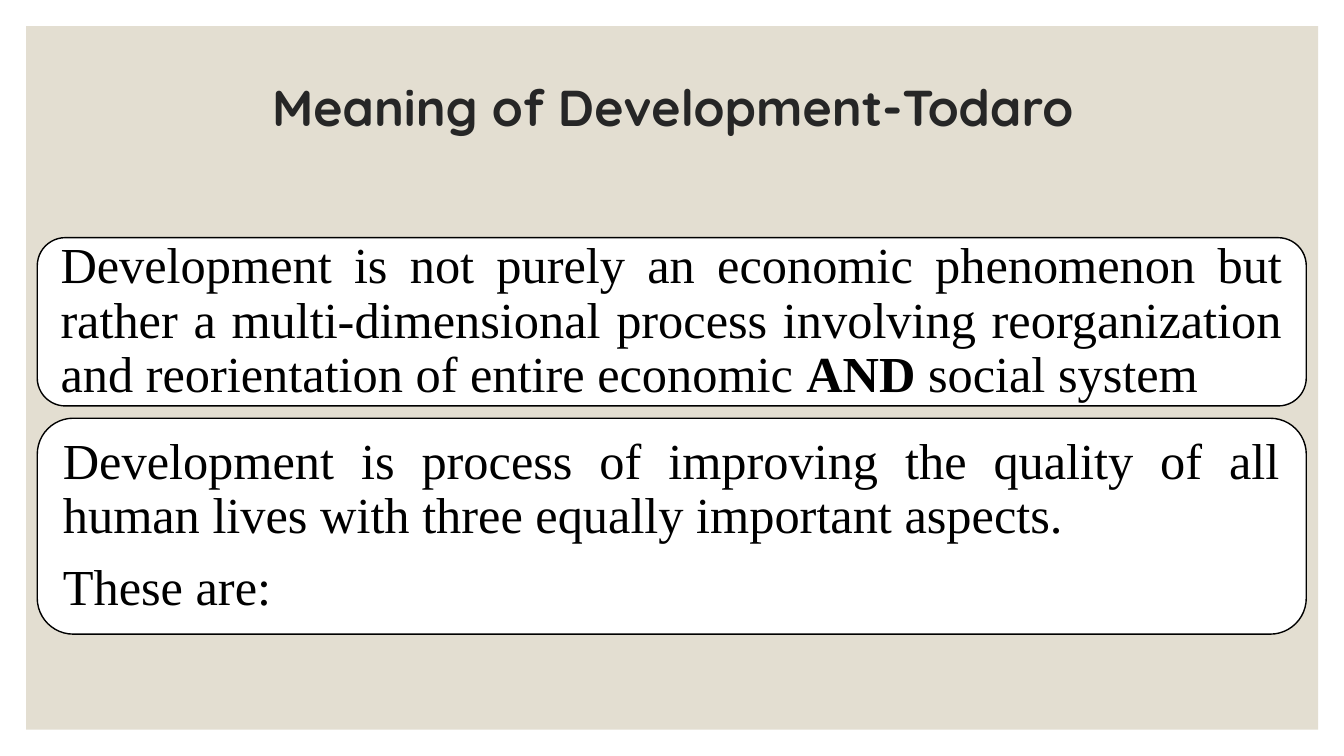
from dataclasses import dataclass

from pptx import Presentation
from pptx import util as u
from pptx.dml.color import RGBColor
from pptx.enum import shapes, text

BODY_FORMAT = {"name": "Times New Roman", "size": u.Pt(36), "bold": False}
TITLE_FORMAT = {"name": "Quicksand", "size": u.Pt(36), "bold": True}
INSET = 0.38


@dataclass
class Span:
    wording: str
    bold: bool = False


@dataclass
class Card:
    top: float
    height: float
    paragraphs: list[list[Span]]


CARDS = [
    Card(5.99, 4.24, [[
        Span("Development is not purely an economic phenomenon but rather a "
             "multi-dimensional process involving reorganization and "
             "reorientation of entire economic "),
        Span("AND", bold=True),
        Span(" social system"),
    ]]),
    Card(10.54, 5.44, [
        [Span("Development is process of improving the quality of all human "
              "lives with three equally important aspects.")],
        [Span("These are:")],
    ]),
]


def colour(value: str) -> RGBColor:
    return RGBColor.from_string(value)


def apply_format(target, values: dict) -> None:
    for name, value in values.items():
        setattr(target, name, value)


def add_box(page, kind, left: float, top: float, width: float, height: float, fill: str):
    box = page.shapes.add_shape(kind, u.Cm(left), u.Cm(top), u.Cm(width), u.Cm(height))
    box.shadow.inherit = False
    box.fill.solid()
    box.fill.fore_color.rgb = colour(fill)
    return box


def add_backdrop(page) -> None:
    backdrop = add_box(page, shapes.MSO_SHAPE.RECTANGLE, 0.66, 0.66, 32.56, 17.73, "E3DED1")
    backdrop.line.fill.background()
    page.shapes.element.insert(2, backdrop.element)


def write_title(page, wording: str) -> None:
    title = page.shapes.title
    apply_format(title, {"left": u.Cm(2.97), "top": u.Cm(1.78),
                         "width": u.Cm(27.97), "height": u.Cm(1.98)})
    frame = title.text_frame
    apply_format(frame, {"text": wording, "word_wrap": True,
                         "auto_size": text.MSO_AUTO_SIZE.NONE,
                         "vertical_anchor": text.MSO_ANCHOR.MIDDLE})
    para = frame.paragraphs[0]
    apply_format(para, {"alignment": text.PP_ALIGN.CENTER, "line_spacing": 0.9})
    span = para.runs[0]
    apply_format(span.font, TITLE_FORMAT)
    span.font.color.rgb = colour("262626")


def add_card(page, card: Card) -> None:
    box = add_box(page, shapes.MSO_SHAPE.ROUNDED_RECTANGLE,
                  0.94, card.top, 31.98, card.height, "FFFFFF")
    box.line.color.rgb = colour("000000")
    box.line.width = u.Pt(1)
    frame = box.text_frame
    apply_format(frame, {"word_wrap": True, "vertical_anchor": text.MSO_ANCHOR.MIDDLE})
    apply_format(frame, {f"margin_{side}": u.Cm(INSET)
                         for side in ("left", "top", "right", "bottom")})
    for index, spans in enumerate(card.paragraphs):
        para = frame.add_paragraph() if index else frame.paragraphs[0]
        apply_format(para, {"alignment": text.PP_ALIGN.JUSTIFY, "line_spacing": 0.9,
                            "space_after": u.Pt(12.6)})
        for part in spans:
            span = para.add_run()
            span.text = part.wording
            apply_format(span.font, BODY_FORMAT | {"bold": part.bold})
            span.font.color.rgb = colour("000000")


def main() -> None:
    deck = Presentation()
    apply_format(deck, {"slide_width": u.Cm(33.87), "slide_height": u.Cm(19.05)})
    page = deck.slides.add_slide(deck.slide_layouts.get_by_name("Title Only"))
    add_backdrop(page)
    write_title(page, "Meaning of Development-Todaro")
    for card in CARDS:
        add_card(page, card)
    deck.save("out.pptx")


if __name__ == "__main__":
    main()
